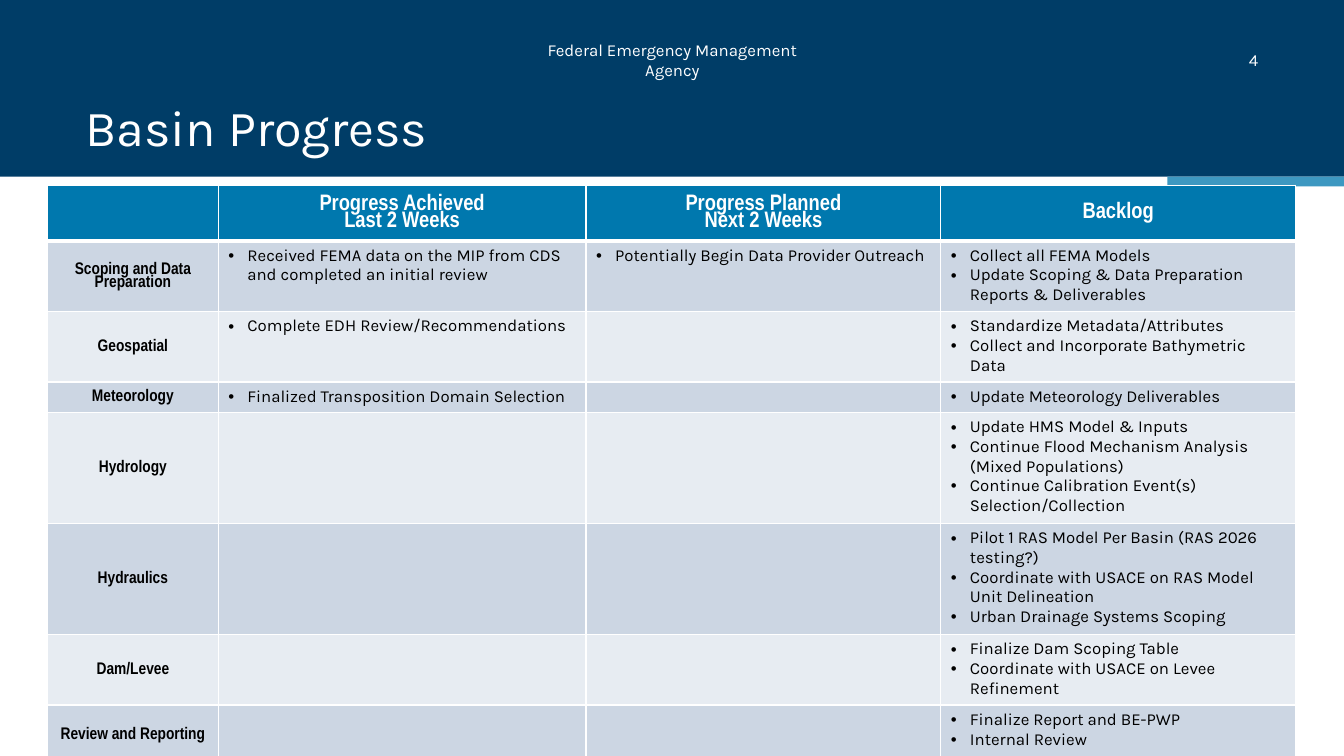
from lxml.etree import SubElement
from pptx import Presentation
from pptx.dml.color import RGBColor
from pptx.enum.shapes import MSO_SHAPE as Shape
from pptx.enum.text import MSO_ANCHOR as Anchor, PP_ALIGN as Align
from pptx.oxml.ns import qn
from pptx.util import Cm, Pt

# Content
TITLE = "Basin Progress"
AGENCY = "Federal Emergency Management Agency"
NUMBER = "4"
HEADS = ["", "Progress Achieved\nLast 2 Weeks",
         "Progress Planned\nNext 2 Weeks", "Backlog"]
ROWS = [
    ("Scoping and Data Preparation",
     "Received FEMA data on the MIP from CDS and completed an initial review",
     "Potentially Begin Data Provider Outreach",
     "Collect all FEMA Models\n"
     "Update Scoping & Data Preparation Reports & Deliverables"),
    ("Geospatial", "Complete EDH Review/Recommendations", "",
     "Standardize Metadata/Attributes\n"
     "Collect and Incorporate Bathymetric Data"),
    ("Meteorology", "Finalized Transposition Domain Selection", "",
     "Update Meteorology Deliverables"),
    ("Hydrology", "", "",
     "Update HMS Model & Inputs\n"
     "Continue Flood Mechanism Analysis (Mixed Populations)\n"
     "Continue Calibration Event(s) Selection/Collection"),
    ("Hydraulics", "", "",
     "Pilot 1 RAS Model Per Basin (RAS 2026 testing?)\n"
     "Coordinate with USACE on RAS Model Unit Delineation\n"
     "Urban Drainage Systems Scoping"),
    ("Dam/Levee", "", "",
     "Finalize Dam Scoping Table\n"
     "Coordinate with USACE on Levee Refinement"),
    ("Review and Reporting", "", "",
     "Finalize Report and BE-PWP\nInternal Review"),
]
WIDTHS = [4.3, 9.27, 8.94, 8.94]
HEIGHTS = [1.4, 1.78, 1.75, 0.75, 2.8, 2.75, 1.78, 1.52]

# Style
BODY, NARROW = "Karla", "Arial Narrow"
WHITE, BLACK = "FFFFFF", "000000"
NAVY, TEAL, SKY = "003D67", "0078AE", "3D98C1"
BANDS = ["CCD6E3", "E7ECF2"]


def color(code):
    return RGBColor.from_string(code)


def paint(item, code):
    item.fill.solid()
    item.fill.fore_color.rgb = color(code)


def write(frame, text, size=12, font=BODY, ink=WHITE, bold=False,
          align=Align.LEFT, space=None, bullet=False):
    frame.word_wrap = True
    for i, line in enumerate(text.split("\n")):
        para = frame.add_paragraph() if i else frame.paragraphs[0]
        para.alignment = align
        para.line_spacing = space
        if not line:
            # Keep an empty cell from growing its row
            SubElement(para._p, qn("a:endParaRPr"), sz=str(size * 100))
            continue
        if bullet:
            props = para._p.get_or_add_pPr()
            props.set("marL", str(Cm(0.48)))
            props.set("indent", str(-Cm(0.48)))
            SubElement(props, qn("a:buFont"), typeface="Arial")
            SubElement(props, qn("a:buChar"), char="•")
        run = para.add_run()
        run.text = line
        run.font.size = Pt(size)
        run.font.name = font
        run.font.bold = bold
        run.font.color.rgb = color(ink)


def block(slide, box, code):
    rect = slide.shapes.add_shape(Shape.RECTANGLE, *map(Cm, box))
    rect.shadow.inherit = False
    rect.line.fill.background()
    paint(rect, code)


def label(slide, box, text, anchor, align):
    frame = slide.shapes.add_textbox(*map(Cm, box)).text_frame
    frame.vertical_anchor = anchor
    write(frame, text, align=align)


def border(cell, base):
    props = cell._tc.get_or_add_tcPr()
    for i, (side, width) in enumerate(
            [("L", 1), ("R", 1), ("T", 1), ("B", base)]):
        line = SubElement(props, qn(f"a:ln{side}"), w=str(Pt(width)))
        fill = SubElement(line, qn("a:solidFill"))
        SubElement(fill, qn("a:srgbClr"), val=WHITE)
        props.remove(line)
        props.insert(i, line)


def center(cell, text, **style):
    cell.vertical_anchor = Anchor.MIDDLE
    cell.margin_left = cell.margin_right = cell.margin_top = Cm(0.03)
    cell.margin_bottom = 0
    write(cell.text_frame, text, font=NARROW, bold=True,
          align=Align.CENTER, space=0.83, **style)


def grid(slide):
    grid_rows = [HEADS, *ROWS]
    table = slide.shapes.add_table(
        len(grid_rows), len(HEADS), Cm(1.2), Cm(4.67),
        Cm(sum(WIDTHS)), Cm(sum(HEIGHTS))).table
    for col, width in zip(table.columns, WIDTHS):
        col.width = Cm(width)
    for r, texts in enumerate(grid_rows):
        table.rows[r].height = Cm(HEIGHTS[r])
        for c, text in enumerate(texts):
            cell = table.cell(r, c)
            paint(cell, BANDS[(r - 1) % 2] if r else TEAL)
            border(cell, 1 if r else 3)
            if r == 0:
                center(cell, text, size=16)
            elif c == 0:
                center(cell, text, ink=BLACK)
            else:
                write(cell.text_frame, text, ink=BLACK, bullet=True)


def main():
    deck = Presentation()
    deck.slide_width, deck.slide_height = Cm(33.87), Cm(19.05)
    slide = deck.slides.add_slide(deck.slide_layouts[5])

    # Top band and accent bar
    block(slide, (0, 0, 33.87, 4.45), NAVY)
    block(slide, (29.42, 4.45, 4.45, 0.25), SKY)
    label(slide, (12.88, 1.12, 8.13, 0.76), AGENCY,
          Anchor.MIDDLE, Align.CENTER)

    # Title, raised above the band
    title = slide.shapes.title
    title.left, title.top, title.width, title.height = map(
        Cm, (1.9, 2.54, 30.07, 1.27))
    title.text_frame.vertical_anchor = Anchor.MIDDLE
    write(title.text_frame, TITLE, size=36, space=Pt(44))
    slide.shapes._spTree.append(title._element)

    label(slide, (31.14, 1.12, 0.82, 0.76), NUMBER, Anchor.TOP, Align.RIGHT)
    grid(slide)
    deck.save("out.pptx")


if __name__ == "__main__":
    main()
